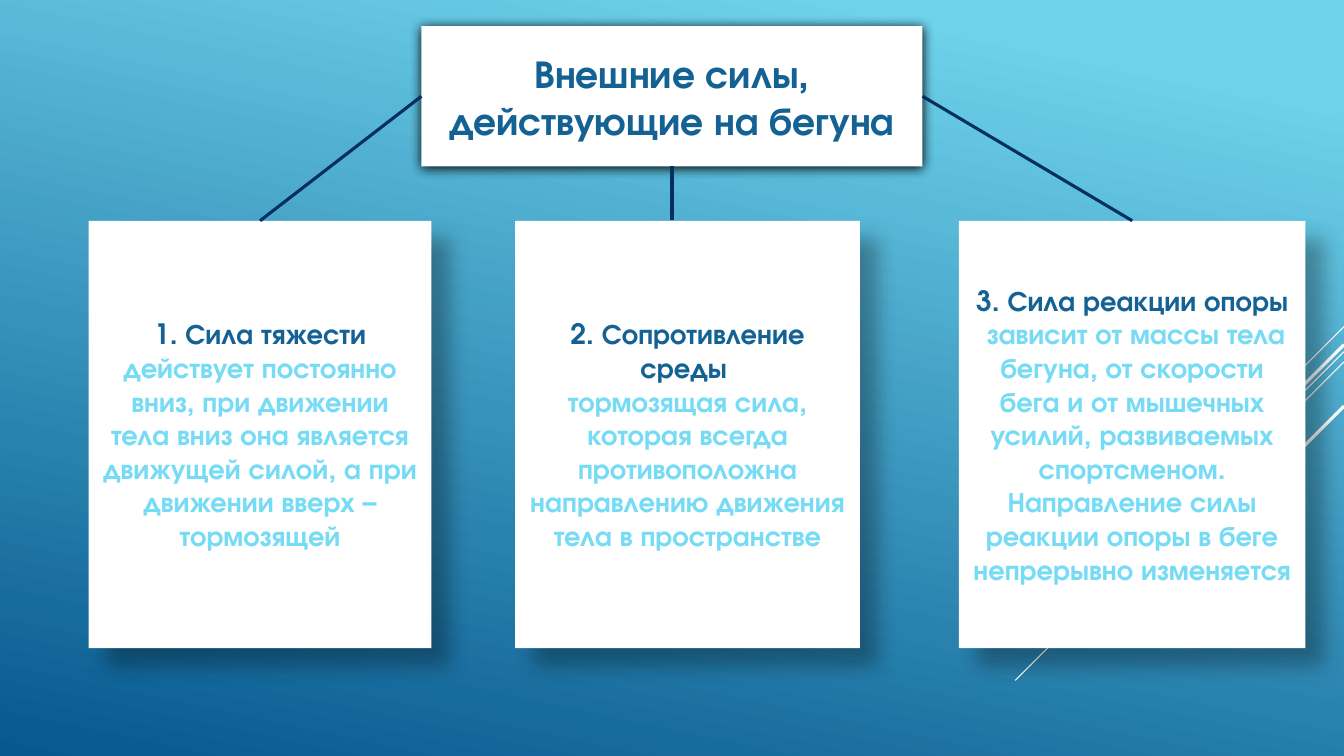
from lxml.etree import SubElement
from pptx import Presentation
from pptx.dml.color import RGBColor
from pptx.enum.shapes import MSO_CONNECTOR, MSO_SHAPE
from pptx.enum.text import MSO_ANCHOR, MSO_AUTO_SIZE, PP_ALIGN
from pptx.oxml.ns import qn
from pptx.util import Inches, Pt

C = {"sky": "6ED2EB", "deep": "06588E", "white": "FFFFFF", "head": "146194",
     "body": "76DBF4", "link": "052F61", "shadow": "000000"}
FONT = "TeX Gyre Adventor"

prs = Presentation()
prs.slide_width, prs.slide_height = Inches(13.33), Inches(7.5)
# Lengths are percentages of the slide's width and height
W, H = prs.slide_width / 100, prs.slide_height / 100
s = prs.slides.add_slide(prs.slide_layouts[5])


def add_text(p, text, size=20, color="head"):
    p.alignment = PP_ALIGN.CENTER
    r = p.add_run()
    r.text = text
    r.font.name, r.font.size, r.font.bold = FONT, Pt(size), True
    r.font.color.rgb = RGBColor.from_string(C[color])


def add_line(x1, y1, x2, y2, color, width):
    ln = s.shapes.add_connector(MSO_CONNECTOR.STRAIGHT,
                                *(int(v) for v in (x1, y1, x2, y2)))
    ln.line.color.rgb = RGBColor.from_string(C[color])
    ln.line.width = Pt(width)
    SubElement(ln._element.spPr, qn("a:effectLst"))
    return ln


# Background gradient
fill = s.background.fill
fill.gradient()
fill.gradient_angle = 258
for stop, position, color in zip(fill.gradient_stops, (0.1, 1), ("sky", "deep")):
    stop.position = position
    stop.color.rgb = RGBColor.from_string(C[color])

# Diagonal strokes at 45 degrees from the right edge: start, run, width
for y, run, width in [(43.2, 7.5, 0.75), (46.53, 24.46, 0.75), (47.87, 15.53, 0.75),
                      (45.6, 14.33, 2.25), (53.73, 10.43, 2.25)]:
    add_line(100 * W, y * H, (100 - run) * W, y * H + run * W, "white", width)

# Heading
title = s.shapes.title
title.left, title.top = int(31.36 * W), int(3.47 * H)
title.width, title.height = int(37.28 * W), int(18.53 * H)
add_text(title.text_frame.paragraphs[0], "Внешние силы, действующие на бегуна", size=28)

# Three force cards: left edge, paragraphs of (text, colour) runs
forces = [
    (6.6, [[("1. Сила тяжести ", "head"),
            ("действует постоянно вниз, при движении тела вниз она является "
             "движущей силой, а при движении вверх – тормозящей", "body")]]),
    (38.33, [[("2. Сопротивление среды ", "head")],
             [("тормозящая сила, которая всегда противоположна направлению "
               "движения тела в пространстве", "body")]]),
    (71.34, [[("3. Сила реакции опоры", "head")],
             [(" зависит от массы тела бегуна, от скорости бега и от мышечных "
               "усилий, развиваемых спортсменом. Направление силы реакции опоры "
               "в беге непрерывно изменяется", "body")]]),
]
cards = []
for i, (left, paragraphs) in enumerate(forces):
    card = s.shapes.add_shape(MSO_SHAPE.RECTANGLE, int(left * W), int(29.2 * H),
                              int((25.5 + 0.15 * i) * W), int(56.53 * H))
    tf = card.text_frame
    for j, runs in enumerate(paragraphs):
        p = tf.add_paragraph() if j else tf.paragraphs[0]
        for text, color in runs:
            add_text(p, text, color=color)
    cards.append(card)

# White boxes with shadows: opacity %, blur, distance, angle
for box, (alpha, blur, dist, angle) in zip(
        [title] + cards, [(100, 8.5, 1, 90)] + [(30, 15, 18, 45)] * 3):
    box.fill.solid()
    box.fill.fore_color.rgb = RGBColor.from_string(C["white"])
    box.line.fill.background()
    box.shadow.inherit = False
    shadow = SubElement(box._element.spPr.find(qn("a:effectLst")), qn("a:outerShdw"),
                        blurRad=str(Pt(blur)), dist=str(Pt(dist)),
                        dir=str(angle * 60000), algn="tl", rotWithShape="0")
    clr = SubElement(shadow, qn("a:srgbClr"), val=C["shadow"])
    SubElement(clr, qn("a:alpha"), val=str(alpha * 1000))
    tf = box.text_frame
    tf.word_wrap = True
    tf.auto_size = MSO_AUTO_SIZE.NONE
    tf.vertical_anchor = MSO_ANCHOR.MIDDLE

# Links from the heading's left, bottom and right sides
for card, side in zip(cards, (1, 2, 3)):
    ln = add_line(50 * W, 22 * H, 50 * W, 29.1 * H, "link", 2.25)
    ln.begin_connect(title, side)
    if side != 2:  # the middle link drops straight down, off the card's centre
        ln.end_connect(card, 0)

prs.save("out.pptx")
